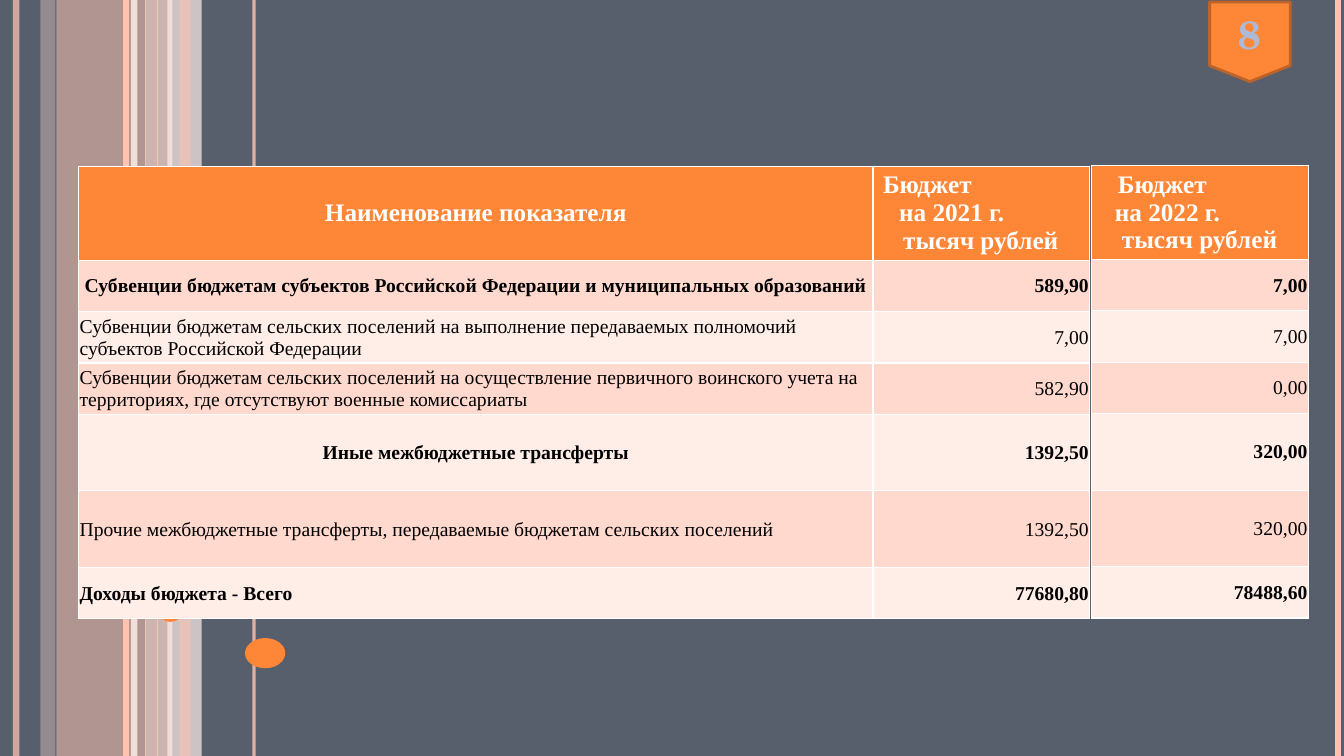
import lxml.etree
import pptx
import pptx.dml.color
import pptx.enum.shapes
import pptx.enum.text
import pptx.oxml.ns
import pptx.util

qn = pptx.oxml.ns.qn
SHAPE = pptx.enum.shapes.MSO_SHAPE
ALIGN = pptx.enum.text.PP_ALIGN
MIDDLE = pptx.enum.text.MSO_ANCHOR.MIDDLE

ORANGE, PEACH, PALE, PALEST = "FE8637", "FEC3AE", "FFD9CE", "FFEDE8"
WHITE, BLACK = "FFFFFF", "000000"

# left, width, colour, opacity; lengths are percent of the slide
BANDS = [(4.2, 6.67, PEACH, 54), (3, 1.13, PALE, 36),
         (10.8, 2.03, PALE, 70), (12.45, 2.55, PALEST, 71)]
# x, colour, points, opacity
STRIPES = [(1.2, PEACH, 4.5, 73), (9.98, PALEST, 4.5, 83), (9.38, PEACH, 4.5, 100),
           (18.9, PEACH, 2.25, 82), (11.7, PEACH, 0.75, 100)]
BUBBLES = [(6.67, 50, 14.17, 18.93), (14.48, 70.93, 7.05, 9.33), (11.93, 80.27, 1.5, 2),
           (18.23, 84.4, 3, 4), (20.55, 65.33, 3.98, 5.33)]

HEADER, LOW, HIGH = 12.4, 6.8, 10.13
ROW_HEIGHTS = [HEADER, LOW, LOW, LOW, HIGH, HIGH, LOW]
NAME_WIDTH, SUM_WIDTH = 59.1, 16.13
# name, alignment, bold, 2021, 2022
BUDGET = [
    ("Субвенции бюджетам субъектов Российской Федерации и муниципальных образований",
     ALIGN.CENTER, True, "589,90", "7,00"),
    ("Субвенции бюджетам сельских поселений на выполнение передаваемых полномочий "
     "субъектов Российской Федерации", ALIGN.LEFT, False, "7,00", "7,00"),
    ("Субвенции бюджетам сельских поселений на осуществление первичного воинского учета "
     "на территориях, где отсутствуют военные комиссариаты",
     ALIGN.LEFT, False, "582,90", "0,00"),
    ("Иные межбюджетные трансферты", ALIGN.CENTER, True, "1392,50", "320,00"),
    ("Прочие межбюджетные трансферты, передаваемые бюджетам сельских поселений",
     ALIGN.LEFT, False, "1392,50", "320,00"),
    ("Доходы бюджета - Всего", ALIGN.LEFT, True, "77680,80", "78488,60"),
]


def rgb(color):
    return pptx.dml.color.RGBColor.from_string(color)


def set_opacity(sp, percent):
    if percent < 100:
        for clr in sp._element.iter(qn("a:srgbClr")):
            lxml.etree.SubElement(clr, qn("a:alpha"), val=str(percent * 1000))


def write(tf, text, size=14, color=BLACK, bold=False, align=ALIGN.LEFT,
          font="Times New Roman", indents=()):
    """Write one paragraph per line; indents are left margins in inches."""
    for i, line in enumerate(text.split("\n")):
        p = tf.paragraphs[0] if i == 0 else tf.add_paragraph()
        p.alignment = align
        if indents:
            p._p.get_or_add_pPr().set("marL", str(pptx.util.Inches(indents[i])))
        r = p.add_run()
        r.text = line
        r.font.name, r.font.size = font, pptx.util.Pt(size)
        r.font.bold, r.font.color.rgb = bold, rgb(color)


def set_borders(cell, color=WHITE, points=1):
    tc_pr = cell._tc.get_or_add_tcPr()
    for i, side in enumerate(("lnL", "lnR", "lnT", "lnB")):
        ln = lxml.etree.Element(qn("a:" + side), w=str(pptx.util.Pt(points)))
        fill = lxml.etree.SubElement(ln, qn("a:solidFill"))
        lxml.etree.SubElement(fill, qn("a:srgbClr"), val=color)
        tc_pr.insert(i, ln)


class Deck:
    """Holds the presentation and its slide; lengths are percent of the slide."""

    def __init__(self, background):
        self.prs = pptx.Presentation()
        self.prs.slide_width = pptx.util.Inches(13.33)
        self.prs.slide_height = pptx.util.Inches(7.5)
        self.s = self.prs.slides.add_slide(self.prs.slide_layouts[6])
        self.s.background.fill.solid()
        self.s.background.fill.fore_color.rgb = rgb(background)

    def x(self, share):
        return round(self.prs.slide_width * share / 100)

    def y(self, share):
        return round(self.prs.slide_height * share / 100)

    def shape(self, kind, left, top, width, height, fill, opacity=100, line=None):
        sp = self.s.shapes.add_shape(kind, self.x(left), self.y(top),
                                     self.x(width), self.y(height))
        sp.shadow.inherit = False
        sp.fill.solid()
        sp.fill.fore_color.rgb = rgb(fill)
        set_opacity(sp, opacity)
        if line:
            sp.line.color.rgb = rgb(line)
            sp.line.width = pptx.util.Pt(2)
        else:
            sp.line.fill.background()
        return sp

    def stripe(self, x, color, points, opacity=100):
        sp = self.s.shapes.add_connector(pptx.enum.shapes.MSO_CONNECTOR.STRAIGHT,
                                         self.x(x), 0, self.x(x), self.y(100))
        sp.line.color.rgb = rgb(color)
        sp.line.width = pptx.util.Pt(points)
        set_opacity(sp, opacity)
        lxml.etree.SubElement(sp._element.spPr, qn("a:effectLst"))

    def table(self, left, top, widths, rows):
        """Each row is a list of (text, format) pairs; the first row is the header."""
        table = self.s.shapes.add_table(len(rows), len(widths), self.x(left), self.y(top),
                                        self.x(sum(widths)), self.y(sum(ROW_HEIGHTS))).table
        for col, width in zip(table.columns, widths):
            col.width = self.x(width)
        for i, row in enumerate(rows):
            table.rows[i].height = self.y(ROW_HEIGHTS[i])
            for j, (text, style) in enumerate(row):
                cell = table.cell(i, j)
                cell.vertical_anchor = MIDDLE
                if i:
                    cell.margin_left = cell.margin_right = pptx.util.Inches(0.01)
                    cell.margin_top, cell.margin_bottom = pptx.util.Inches(0.01), 0
                cell.fill.solid()
                cell.fill.fore_color.rgb = rgb((PALE if i % 2 else PALEST) if i else ORANGE)
                set_borders(cell)
                write(cell.text_frame, text, **style)


def header(text, **style):
    return text, dict(size=18, color=WHITE, bold=True, **style)


def year_header(year, indents):
    return header(f"Бюджет\nна {year} г.\nтысяч рублей", indents=indents)


def amount(text, bold):
    return text, dict(bold=bold, align=ALIGN.RIGHT)


def main():
    deck = Deck("575F6D")
    for left, width, color, opacity in BANDS:
        deck.shape(SHAPE.RECTANGLE, left, 0, width, 100, color, opacity)
    for stripe in STRIPES:
        deck.stripe(*stripe)
    deck.shape(SHAPE.RECTANGLE, 13.35, 0, 0.83, 100, PEACH, 51)
    for bubble in BUBBLES:
        deck.shape(SHAPE.OVAL, *bubble, ORANGE)
    deck.stripe(99.55, PEACH, 4.5)

    badge = deck.shape(SHAPE.FLOWCHART_OFFPAGE_CONNECTOR, 90, 0.27, 6, 10.53,
                       ORANGE, line="BC6329")
    badge.text_frame.vertical_anchor = MIDDLE
    write(badge.text_frame, "8", size=28, color="AEBAD5", bold=True,
          align=ALIGN.CENTER, font="TeX Gyre Schola")

    rows_2021 = [[header("Наименование показателя", align=ALIGN.CENTER),
                  year_header(2021, (0, 0.16, 0.2))]]
    rows_2022 = [[year_header(2022, (0.16, 0.13, 0.2))]]
    for name, align, bold, sum_2021, sum_2022 in BUDGET:
        rows_2021.append([(name, dict(bold=bold, align=align)), amount(sum_2021, bold)])
        rows_2022.append([amount(sum_2022, bold)])
    deck.table(5.85, 22, [NAME_WIDTH, SUM_WIDTH], rows_2021)
    deck.table(81.23, 21.9, [SUM_WIDTH], rows_2022)

    deck.prs.save("out.pptx")


if __name__ == "__main__":
    main()
